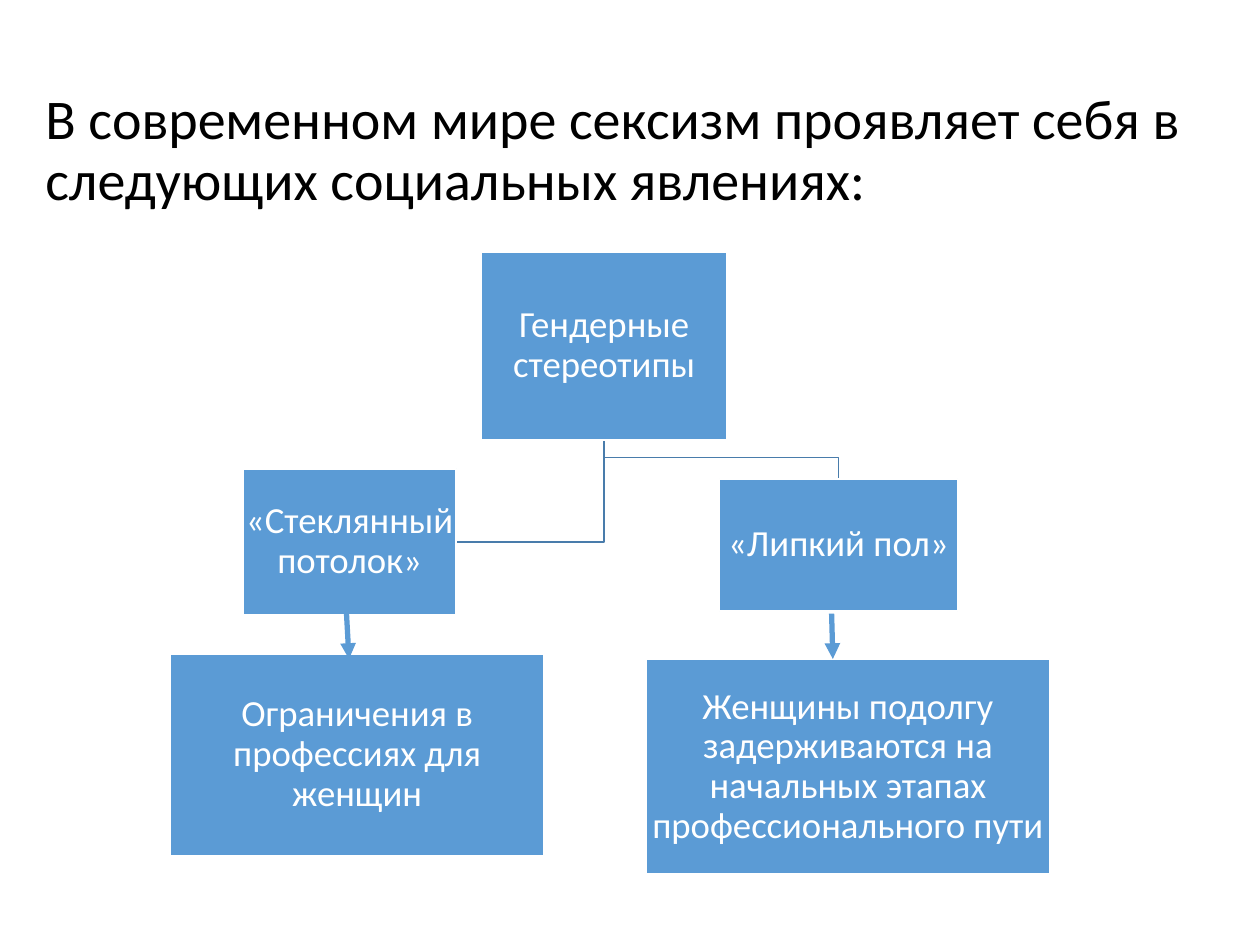
from pptx import Presentation
from pptx.dml.color import RGBColor
from pptx.enum import shapes, text
from pptx.oxml.ns import qn
from pptx.util import Inches, Pt
from lxml import etree

BLUE = RGBColor(0x5B, 0x9B, 0xD5)
DARK_BLUE = RGBColor(0x49, 0x7C, 0xAB)
WHITE = RGBColor(0xFF, 0xFF, 0xFF)
BLACK = RGBColor(0, 0, 0)
FONT = "Calibri"

STEREOTYPES = (2.47, 0, 1.95, 1.49)
STICKY_FLOOR = (4.36, 1.8, 1.89, 1.05)
GLASS_CEILING = (0.58, 1.72, 1.69, 1.16)
LIMITS = (0, 3.19, 2.97, 1.6)
SLOW_CAREER = (3.78, 3.23, 3.2, 1.71)

NODES = [
    ("Гендерные стереотипы", STEREOTYPES),
    ("«Липкий пол»", STICKY_FLOOR),
    ("«Стеклянный потолок»", GLASS_CEILING),
    ("Ограничения в профессиях для женщин", LIMITS),
    ("Женщины подолгу задерживаются на начальных этапах профессионального пути", SLOW_CAREER),
]
ARROWS = [((1.4, 2.87), (1.42, 3.23)), ((5.25, 2.87), (5.26, 3.23))]


def format_text(frame, wording, size, color, alignment):
    """Fill a text frame with one middle-anchored paragraph."""
    frame.text = wording
    frame.word_wrap = True
    frame.auto_size = text.MSO_AUTO_SIZE.NONE
    frame.vertical_anchor = text.MSO_ANCHOR.MIDDLE
    paragraph = frame.paragraphs[0]
    paragraph.alignment = alignment
    paragraph.line_spacing = 0.9
    paragraph.font.name = FONT
    paragraph.font.size = Pt(size)
    paragraph.font.color.rgb = color


def add_title(slide, left, top, width, height):
    """Place the slide title in its placeholder."""
    title = slide.shapes.title
    title.left, title.top = Inches(left), Inches(top)
    title.width, title.height = Inches(width), Inches(height)
    wording = "В современном мире сексизм проявляет себя в следующих социальных явлениях:"
    format_text(title.text_frame, wording, 32, BLACK, text.PP_ALIGN.LEFT)


def add_node(slide, wording, left, top, width, height):
    """Draw one labelled blue box."""
    node = slide.shapes.add_shape(
        shapes.MSO_SHAPE.RECTANGLE,
        Inches(left), Inches(top), Inches(width), Inches(height))
    node.shadow.inherit = False
    node.fill.solid()
    node.fill.fore_color.rgb = BLUE
    node.line.color.rgb = WHITE
    node.line.width = Pt(1)
    frame = node.text_frame
    frame.margin_left = frame.margin_right = Inches(0.01)
    frame.margin_top = frame.margin_bottom = Inches(0.01)
    format_text(frame, wording, 21, WHITE, text.PP_ALIGN.CENTER)


def add_branch(slide, points):
    """Draw an open line with right-angled bends."""
    start, *bends = [(Inches(x), Inches(y)) for x, y in points]
    builder = slide.shapes.build_freeform(*start)
    builder.add_line_segments(bends, close=False)
    branch = builder.convert_to_shape()
    branch.shadow.inherit = False
    branch.fill.background()
    branch.line.color.rgb = DARK_BLUE
    branch.line.width = Pt(1)


def add_arrow(slide, start, end):
    """Draw a thick arrow between two points."""
    arrow = slide.shapes.add_connector(
        shapes.MSO_CONNECTOR.STRAIGHT, *map(Inches, start + end))
    arrow.line.color.rgb = BLUE
    arrow.line.width = Pt(3)
    properties = arrow._element.spPr
    etree.SubElement(properties.find(qn("a:ln")), qn("a:tailEnd"), type="triangle")
    etree.SubElement(properties, qn("a:effectLst"))


def add_diagram(slide, left, top):
    """Draw the hierarchy with its branches and arrows from a top-left corner."""
    def shift(point):
        return left + point[0], top + point[1]

    root_x = STEREOTYPES[0] + STEREOTYPES[2] / 2
    root_bottom = STEREOTYPES[1] + STEREOTYPES[3]
    ceiling_right = GLASS_CEILING[0] + GLASS_CEILING[2]
    ceiling_middle = GLASS_CEILING[1] + GLASS_CEILING[3] / 2
    floor_x = STICKY_FLOOR[0] + STICKY_FLOOR[2] / 2
    floor_top = STICKY_FLOOR[1]
    bend = floor_top - 0.17
    branches = [
        [(root_x, root_bottom), (root_x, ceiling_middle), (ceiling_right, ceiling_middle)],
        [(root_x, root_bottom), (root_x, bend), (floor_x, bend), (floor_x, floor_top)],
    ]
    for points in branches:
        add_branch(slide, map(shift, points))
    for wording, (x, y, width, height) in NODES:
        add_node(slide, wording, left + x, top + y, width, height)
    for start, end in ARROWS:
        add_arrow(slide, shift(start), shift(end))


def main():
    """Build and save the presentation."""
    presentation = Presentation()
    presentation.slide_width, presentation.slide_height = Inches(10), Inches(7.5)
    slide = presentation.slides.add_slide(presentation.slide_layouts[5])
    add_title(slide, 0.26, 0.56, 9.74, 1.29)
    add_diagram(slide, 1.35, 2)
    presentation.save("out.pptx")


if __name__ == "__main__":
    main()
